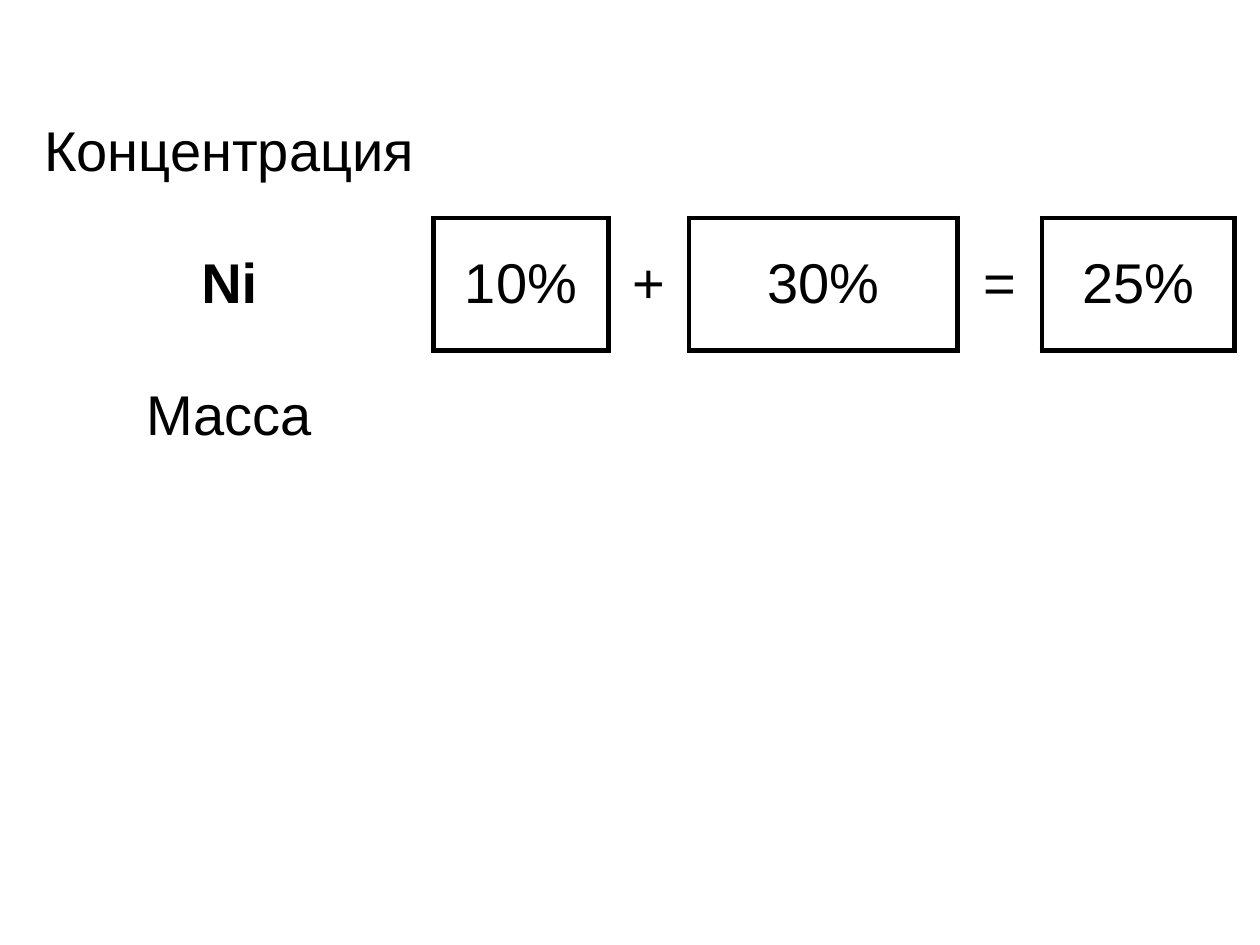
from lxml import etree
from pptx import Presentation
from pptx.dml.color import RGBColor
from pptx.enum import text
from pptx.oxml import ns
from pptx.util import Inches, Pt

BLACK = RGBColor(0, 0, 0)
COL_WIDTHS = [3.24, 1.39, 0.64, 2.13, 0.67, 1.53]
ROWS = [
    ["Концентрация", "", "", "", "", ""],
    ["Ni", "10%", "+", "30%", "=", "25%"],
    ["Масса", "", "", "", "", ""],
]
BOXED = {(1, 1), (1, 3), (1, 5)}
SIDES = {"lnL": (0, -1), "lnR": (0, 1), "lnT": (-1, 0), "lnB": (1, 0)}


def add_border(cell, side, visible):
    ln = etree.SubElement(cell._tc.get_or_add_tcPr(), ns.qn(f"a:{side}"))
    if visible:
        ln.set("w", str(Pt(3)))
        fill = etree.SubElement(ln, ns.qn("a:solidFill"))
        etree.SubElement(fill, ns.qn("a:srgbClr"), val=str(BLACK))
    else:
        etree.SubElement(ln, ns.qn("a:noFill"))


prs = Presentation()
prs.slide_width, prs.slide_height = Inches(10), Inches(7.5)
s = prs.slides.add_slide(prs.slide_layouts[6])

table = s.shapes.add_table(
    len(ROWS), len(COL_WIDTHS),
    Inches(0.2), Inches(0.68), Inches(sum(COL_WIDTHS)), Inches(3.15),
).table
table.first_row = table.horz_banding = False
for col, width in zip(table.columns, COL_WIDTHS):
    col.width = Inches(width)

for i, row in enumerate(ROWS):
    table.rows[i].height = Inches(1.05)
    for j, label in enumerate(row):
        cell = table.cell(i, j)
        # A shared edge is drawn when the cell on either side of it is boxed
        for side, (di, dj) in SIDES.items():
            add_border(cell, side, bool({(i, j), (i + di, j + dj)} & BOXED))
        cell.fill.background()
        cell.vertical_anchor = text.MSO_ANCHOR.MIDDLE
        cell.margin_left = cell.margin_right = Inches(0.05)
        p = cell.text_frame.paragraphs[0]
        p.text = label
        p.alignment = text.PP_ALIGN.CENTER
        p.font.name = "Arial"
        p.font.size = Pt(32)
        p.font.bold = label == "Ni"
        p.font.color.rgb = BLACK

prs.save("out.pptx")
